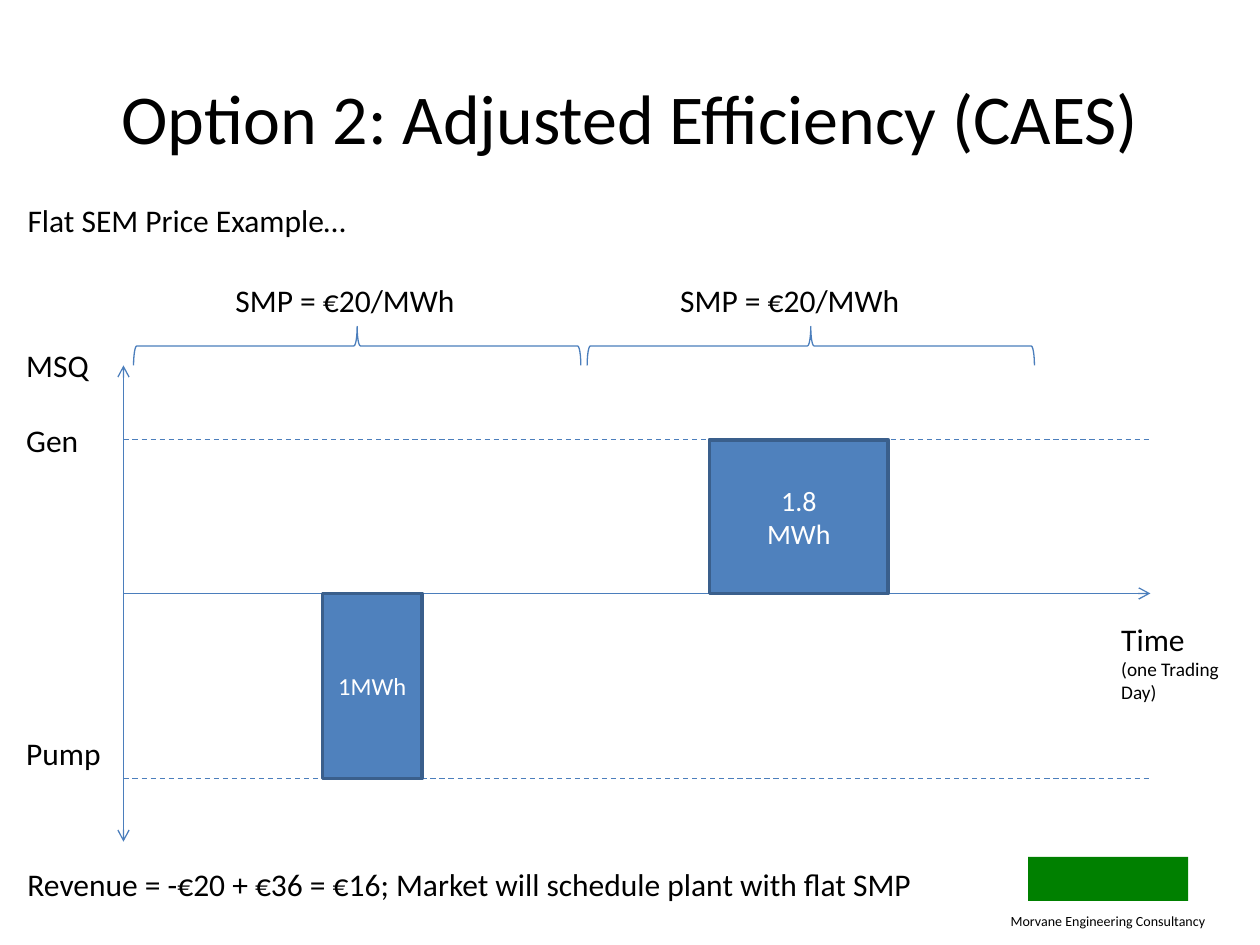
import lxml.etree
import pptx
import pptx.dml.color
import pptx.enum.dml
import pptx.enum.shapes
import pptx.enum.text
import pptx.oxml.ns
import pptx.util

Inches = pptx.util.Inches
Align = pptx.enum.text.PP_ALIGN
Anchor = pptx.enum.text.MSO_ANCHOR
Shapes = pptx.enum.shapes.MSO_SHAPE
qualified = pptx.oxml.ns.qn

COLORS = {
    "text": "000000",
    "light": "FFFFFF",
    "line": "4B7EBC",
    "block": "4F81BD",
    "border": "3A5F8C",
    "emblem": "008000",
}


def color(name):
    return pptx.dml.color.RGBColor.from_string(COLORS[name])


class Diagram:
    font_name = "Calibri"
    line_width = 0.75

    def __init__(self, slide):
        self.slide = slide

    def apply(self, target, formats):
        for name, value in formats.items():
            setattr(target, name, value)

    def fill_text(self, shape, runs, ink="text", align=Align.LEFT, anchor=Anchor.TOP):
        frame = shape.text_frame
        self.apply(frame, {"word_wrap": True, "vertical_anchor": anchor})
        paragraph = frame.paragraphs[0]
        paragraph.alignment = align
        for text, size in runs:
            for index, line in enumerate(text.split("\n")):
                if index:
                    paragraph.add_line_break()
                run = paragraph.add_run()
                run.text = line
                self.apply(run.font, {"name": self.font_name, "size": pptx.util.Pt(size)})
                run.font.color.rgb = color(ink)

    def text(self, box, *runs, **formats):
        shape = self.slide.shapes.add_textbox(*map(Inches, box))
        self.fill_text(shape, runs, **formats)
        return shape

    def shape(self, kind, box, fill=None, border=None, width=line_width):
        shape = self.slide.shapes.add_shape(kind, *map(Inches, box))
        shape.shadow.inherit = False
        if fill:
            shape.fill.solid()
            shape.fill.fore_color.rgb = color(fill)
        else:
            shape.fill.background()
        if border:
            shape.line.color.rgb = color(border)
            shape.line.width = pptx.util.Pt(width)
        else:
            shape.line.fill.background()
        return shape

    def block(self, box, text, size):
        shape = self.shape(Shapes.RECTANGLE, box, "block", "border", 2)
        self.fill_text(shape, [(text, size)], "light", Align.CENTER, Anchor.MIDDLE)

    def brace(self, left):
        shape = self.shape(Shapes.RIGHT_BRACE, (left, 0.97, 0.31, 3.55), border="line")
        shape.rotation = 270

    def line(self, start, end, arrows=(), dashed=False):
        connector = self.slide.shapes.add_connector(
            pptx.enum.shapes.MSO_CONNECTOR.STRAIGHT, *map(Inches, start + end))
        connector.line.color.rgb = color("line")
        connector.line.width = pptx.util.Pt(self.line_width)
        if dashed:
            connector.line.dash_style = pptx.enum.dml.MSO_LINE.DASH
        properties = connector._element.spPr
        outline = properties.find(qualified("a:ln"))
        for arrow in arrows:
            lxml.etree.SubElement(outline, qualified(f"a:{arrow}"), type="arrow")
        lxml.etree.SubElement(properties, qualified("a:effectLst"))


def main():
    presentation = pptx.Presentation()
    presentation.slide_width = Inches(10)
    presentation.slide_height = Inches(7.5)
    diagram = Diagram(presentation.slides.add_slide(presentation.slide_layouts[6]))

    axis_left, axis_right = 0.98, 9.13
    generation, zero, pumping = 3.49, 4.71, 6.18

    diagram.shape(Shapes.RECTANGLE, (8.16, 6.8, 1.27, 0.35), "emblem")
    company = diagram.text((7.68, 7.2, 2.23, 0.25),
                           ("Morvane Engineering Consultancy", 8), align=Align.CENTER)
    margins = ("margin_left", "margin_top", "margin_right", "margin_bottom")
    diagram.apply(company.text_frame, dict.fromkeys(margins, Inches(0.04)))

    diagram.text((0.5, 0.3, 9, 1.25), ("Option 2: Adjusted Efficiency (CAES)", 40),
                 align=Align.CENTER, anchor=Anchor.MIDDLE)

    diagram.line((axis_left, 2.9), (axis_left, 6.68), ("headEnd", "tailEnd"))
    diagram.line((axis_left, zero), (axis_right, zero), ("tailEnd",))
    for level in (generation, pumping):
        diagram.line((axis_left, level), (axis_right, level), dashed=True)

    for label, top in (("MSQ", 2.7), ("Gen", 3.29), ("Pump", 5.78)):
        diagram.text((0.11, top, 0.87, 0.4), (label, 18))
    diagram.text((8.8, 4.87, 1.01, 0.77), ("Time ", 18), ("(one Trading Day)", 11))

    for brace_left, price_left in ((2.68, 1.77), (6.28, 5.3)):
        diagram.brace(brace_left)
        diagram.text((price_left, 2.18, 2.28, 0.4), ("SMP = €20/MWh", 18))

    diagram.block((2.56, zero, 0.79, pumping - zero), "1MWh", 14)
    diagram.block((5.63, generation, 1.42, zero - generation), "1.8\nMWh", 16)

    diagram.text((0.12, 1.55, 8.82, 0.4), ("Flat SEM Price Example…", 18))
    diagram.text((0.12, 6.82, 7.56, 0.4),
                 ("Revenue = -€20 + €36 = €16; Market will schedule plant with flat SMP", 18))

    presentation.save("out.pptx")


if __name__ == "__main__":
    main()
